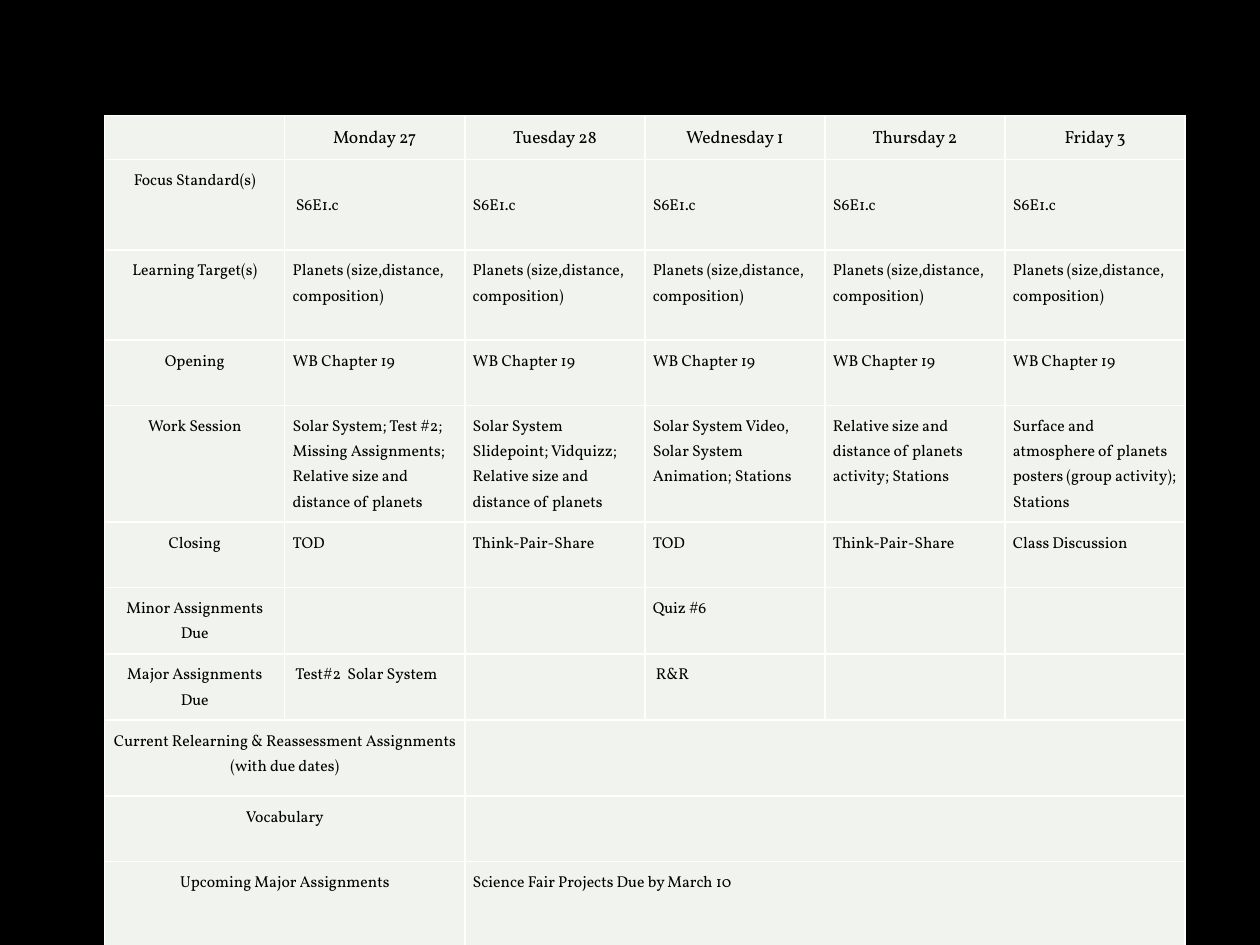
"""Build a weekly lesson plan slide with one table."""
from dataclasses import dataclass

from lxml.etree import SubElement
from pptx import Presentation
from pptx.dml.color import RGBColor
from pptx.enum.text import PP_ALIGN
from pptx.oxml.ns import qn
from pptx.table import Table, _Cell
from pptx.util import Cm, Pt

LEFT, CENTER = PP_ALIGN.LEFT, PP_ALIGN.CENTER


@dataclass(frozen=True)
class Theme:
    font: str = "Vollkorn"
    back: str = "000000"
    ink: str = "000000"
    fill: str = "F0F3EE"
    rule: str = "FFFFFF"
    head: float = 10
    body: float = 9
    line: float = 1.15
    pad: float = 0.16


@dataclass(frozen=True)
class Row:
    label: str
    tall: float
    texts: tuple[str, ...]
    size: float
    align: PP_ALIGN = LEFT
    drop: float = 0


THEME = Theme()
DAYS = 5
WIDE = 3.63
BODY = THEME.body
BLANK = ("",) * DAYS

PLAN = (
    Row("", 0.87, ("Monday 27", "Tuesday 28", "Wednesday 1", "Thursday 2", "Friday 3"),
        THEME.head, CENTER),
    Row("Focus Standard(s)", 1.82, (" S6E1.c",) + ("S6E1.c",) * (DAYS - 1), BODY, drop=0.5),
    Row("Learning Target(s)", 1.82, ("Planets (size,distance, composition)",) * DAYS, BODY),
    Row("Opening", 1.32, ("WB Chapter 19",) * DAYS, BODY),
    Row("Work Session", 2.32, (
        "Solar System; Test #2; Missing Assignments; Relative size and distance of planets",
        "Solar System Slidepoint; Vidquizz;\nRelative size and distance of planets",
        "Solar System Video, Solar System Animation; Stations",
        "Relative size and distance of planets activity; Stations",
        "Surface and atmosphere of planets posters (group activity); Stations"), BODY),
    Row("Closing", 1.32,
        ("TOD", "Think-Pair-Share", "TOD", "Think-Pair-Share", "Class Discussion"), BODY),
    Row("Minor Assignments Due", 1.32, ("", "", "Quiz #6", "", ""), BODY),
    Row("Major Assignments Due", 1.32, (" Test#2  Solar System", "", " R&R", "", ""), BODY),
    Row("Current Relearning & Reassessment Assignments (with due dates)", 1.53, ("",), BODY),
    Row("Vocabulary", 1.32, ("",), BODY),
    Row("Upcoming Major Assignments", 1.82, ("Science Fair Projects Due by March 10",), BODY),
)


def style(cell: _Cell) -> None:
    """Give a cell its borders, fill and margins."""
    props = cell._tc.get_or_add_tcPr()
    for side in ("lnL", "lnR", "lnT", "lnB"):
        line = SubElement(props, qn(f"a:{side}"), w=str(Pt(1)))
        paint = SubElement(line, qn("a:solidFill"))
        SubElement(paint, qn("a:srgbClr"), val=THEME.rule)
    cell.fill.solid()
    cell.fill.fore_color.rgb = RGBColor.from_string(THEME.fill)
    cell.margin_left = cell.margin_right = Cm(THEME.pad)
    cell.margin_top = cell.margin_bottom = Cm(THEME.pad)


def write(cell: _Cell, text: str, size: float, align: PP_ALIGN) -> None:
    """Write text into a cell, one paragraph per line."""
    frame = cell.text_frame
    for num, part in enumerate(text.split("\n")):
        para = frame.add_paragraph() if num else frame.paragraphs[0]
        para.alignment = align
        para.line_spacing = THEME.line
        if part:
            run = para.add_run()
            run.text = part
            run.font.name = THEME.font
            run.font.size = Pt(size)
            run.font.color.rgb = RGBColor.from_string(THEME.ink)
        else:
            SubElement(para._p, qn("a:endParaRPr"), sz=str(int(size * 100)))


def draw(table: Table, num: int, row: Row) -> None:
    """Fill one table row, merging cells when it has a single text."""
    table.rows[num].height = Cm(row.tall)
    cells = [table.cell(num, col) for col in range(DAYS + 1)]
    for cell in cells:
        style(cell)
    start = 1
    if len(row.texts) == 1:
        start = 2
        cells[0].merge(cells[1])
        cells[2].merge(cells[-1])
    write(cells[0], row.label, row.size, CENTER)
    for cell, text in zip(cells[start:], row.texts):
        write(cell, text, row.size, row.align)
        cell.margin_top = Cm(THEME.pad + row.drop)


def main() -> None:
    """Build and save the slide."""
    deck = Presentation()
    deck.slide_width, deck.slide_height = Cm(25.4), Cm(19.05)
    slide = deck.slides.add_slide(deck.slide_layouts[6])
    slide.background.fill.solid()
    slide.background.fill.fore_color.rgb = RGBColor.from_string(THEME.back)
    high = sum(row.tall for row in PLAN)
    table = slide.shapes.add_table(len(PLAN), DAYS + 1, Cm(2.11), Cm(2.33),
                                   Cm(WIDE * (DAYS + 1)), Cm(high)).table
    table.first_row = table.horz_banding = False
    for col in table.columns:
        col.width = Cm(WIDE)
    for num, row in enumerate(PLAN):
        draw(table, num, row)
    deck.save("out.pptx")


if __name__ == "__main__":
    main()
